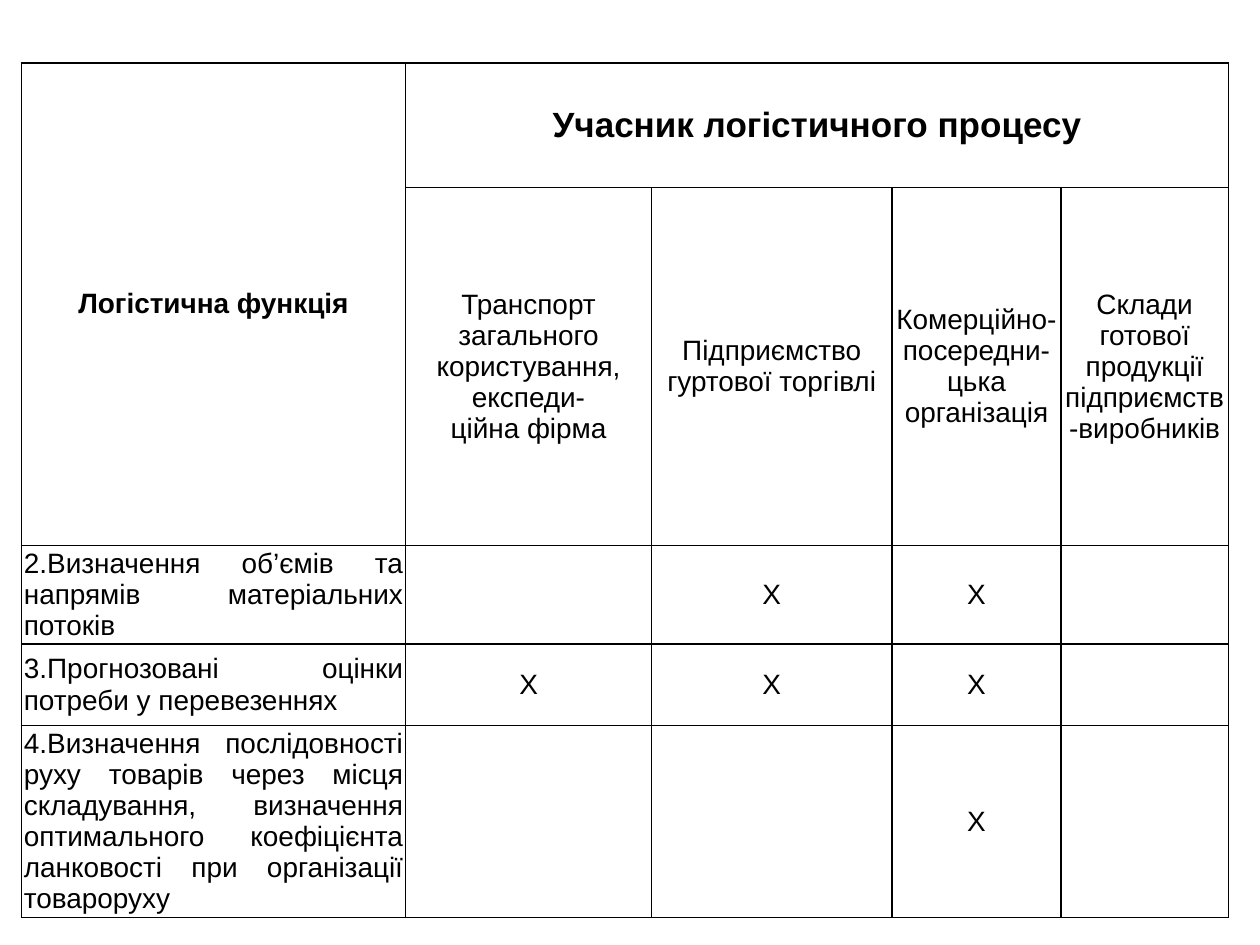
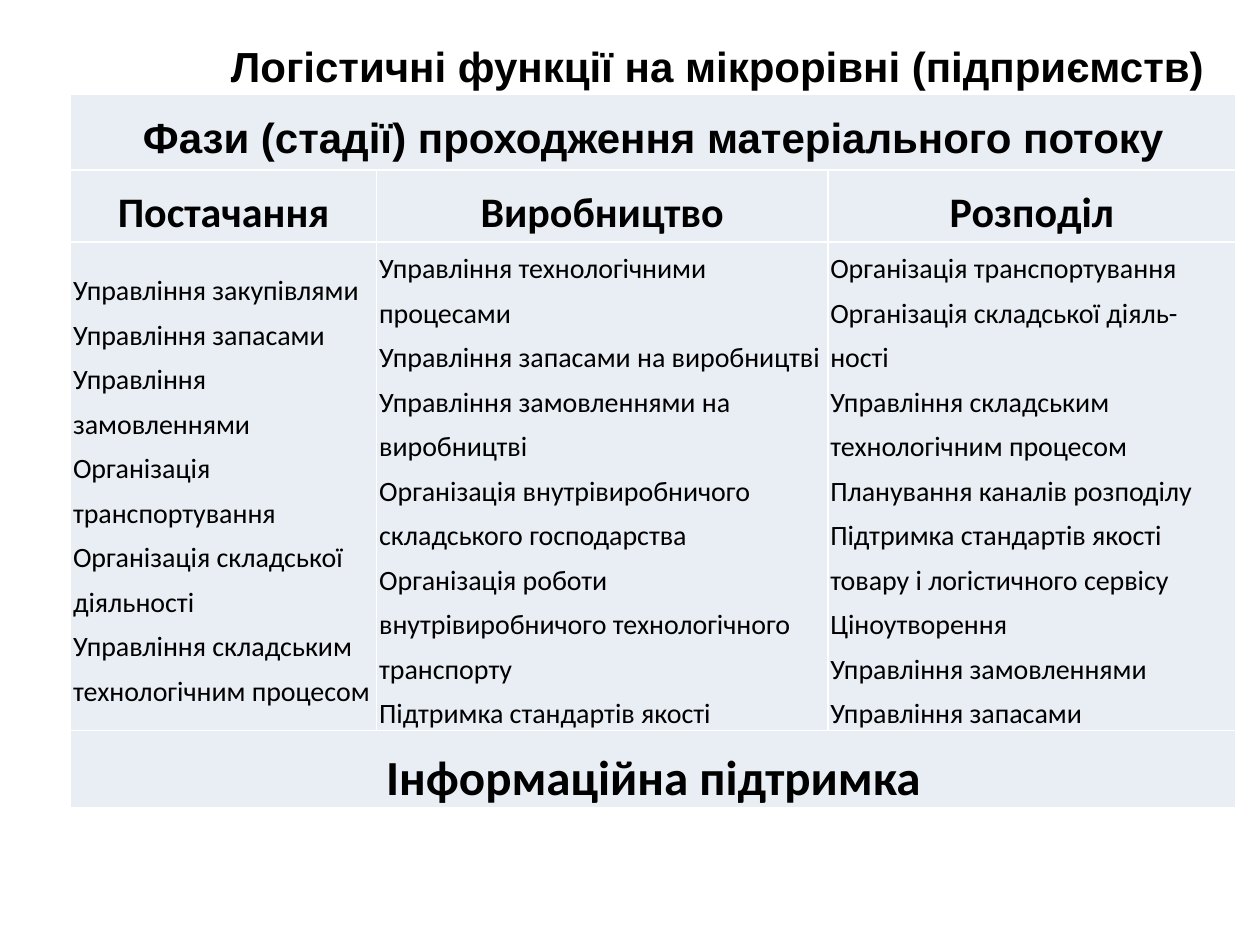
from dataclasses import dataclass

from lxml import etree
from pptx import Presentation
from pptx.dml.color import RGBColor
from pptx.enum.text import MSO_ANCHOR, MSO_AUTO_SIZE, PP_ALIGN
from pptx.oxml.ns import qn
from pptx.util import Inches, Pt

LEFT, CENTER, JUSTIFY = PP_ALIGN.LEFT, PP_ALIGN.CENTER, PP_ALIGN.JUSTIFY
MIDDLE = MSO_ANCHOR.MIDDLE
GROW = MSO_AUTO_SIZE.SHAPE_TO_FIT_TEXT
TITLE_ONLY, BLANK = 5, 6


@dataclass(frozen=True)
class Theme:
    ink: str = "000000"
    paper: str = "FFFFFF"
    band: str = "E9EDF4"
    heading_font: str = "Arial"
    list_font: str = "Calibri"
    body: int = 16
    group: int = 20
    title: int = 24
    footer: int = 28
    line: float = 1
    loose: float = 1.3


THEME = Theme()

PARTICIPANTS = [
    ["Транспорт загального", "користування, експеди-", "ційна фірма"],
    ["Підприємство гуртової торгівлі"],
    ["Комерційно-посередни-", "цька організація"],
    ["Склади готової продукції підприємств-виробників"],
]
# Each function with the columns of the participants that perform it
FUNCTIONS = [
    ("2.Визначення об’ємів та напрямів матеріальних потоків", (2, 3)),
    ("3.Прогнозовані оцінки потреби у перевезеннях", (1, 2, 3)),
    ("4.Визначення послідовності руху товарів через місця складування, визначення "
     "оптимального коефіцієнта ланковості при організації товароруху", (3,)),
]
PHASES = {
    "Постачання": [
        "Управління закупівлями",
        "Управління запасами",
        "Управління замовленнями",
        "Організація транспортування",
        "Організація складської діяльності",
        "Управління складським технологічним процесом",
    ],
    "Виробництво": [
        "Управління технологічними процесами",
        "Управління запасами на виробництві",
        "Управління замовленнями на виробництві",
        "Організація внутрівиробничого складського господарства",
        "Організація роботи внутрівиробничого технологічного транспорту",
        "Підтримка стандартів якості",
    ],
    "Розподіл": [
        "Організація транспортування",
        "Організація складської діяль-ності",
        "Управління складським технологічним процесом",
        "Планування каналів розподілу",
        "Підтримка стандартів якості товару і логістичного сервісу",
        "Ціноутворення",
        "Управління замовленнями",
        "Управління запасами",
    ],
}


def write(tf, *lines, size=THEME.body, font=THEME.heading_font, bold=False,
          align=CENTER, spacing=1.0):
    """Fill a text frame with one paragraph for each line."""
    tf.word_wrap = True
    for i, line in enumerate(lines):
        p = tf.paragraphs[0] if i == 0 else tf.add_paragraph()
        p.alignment, p.line_spacing = align, spacing
        p.space_before = p.space_after = Pt(0)
        r = p.add_run()
        r.text = line
        r.font.size, r.font.name, r.font.bold = Pt(size), font, bold
        r.font.color.rgb = RGBColor.from_string(THEME.ink)


def set_borders(cell, color):
    tcPr = cell._tc.get_or_add_tcPr()
    for i, side in enumerate(("lnL", "lnR", "lnT", "lnB")):
        ln = etree.Element(qn(f"a:{side}"), w=str(Pt(THEME.line)))
        fill = etree.SubElement(ln, qn("a:solidFill"))
        etree.SubElement(fill, qn("a:srgbClr"), val=color)
        tcPr.insert(i, ln)


def add_grid(slide, left, top, cols, rows, border, fill=None, inset=0.02):
    """Add a table with one border colour, one optional fill and tight cells."""
    frame = slide.shapes.add_table(len(rows), len(cols), Inches(left), Inches(top),
                                   Inches(sum(cols)), Inches(sum(rows)))
    table = frame.table
    table.first_row = table.horz_banding = False
    for column, width in zip(table.columns, cols):
        column.width = Inches(width)
    for row, height in zip(table.rows, rows):
        row.height = Inches(height)
    for cell in table.iter_cells():
        cell.vertical_anchor = MIDDLE
        cell.margin_left = cell.margin_right = Inches(0.02)
        cell.margin_top = cell.margin_bottom = Inches(inset)
        if fill:
            cell.fill.solid()
            cell.fill.fore_color.rgb = RGBColor.from_string(fill)
        else:
            cell.fill.background()
        set_borders(cell, border)
    return table


def merged(table, first, last):
    cell = table.cell(*first)
    cell.merge(table.cell(*last))
    return cell.text_frame


def participants_table(slide, left, top):
    table = add_grid(slide, left, top, [3.05, 1.95, 1.91, 1.34, 1.33],
                     [0.99, 2.84, 0.78, 0.65, 1.52], THEME.ink)
    write(merged(table, (0, 0), (1, 0)), "Логістична функція", bold=True)
    write(merged(table, (0, 1), (0, 4)), "Учасник логістичного процесу",
          size=THEME.group, bold=True)
    for col, lines in enumerate(PARTICIPANTS, 1):
        write(table.cell(1, col).text_frame, *lines)
    for row, (function, marks) in enumerate(FUNCTIONS, 2):
        write(table.cell(row, 0).text_frame, function, align=JUSTIFY)
        for col in marks:
            write(table.cell(row, col).text_frame, "Х")


def phases_table(slide, left, top):
    table = add_grid(slide, left, top, [2.43, 3.58, 3.24], [0.6, 0.57, 3.88, 0.61],
                     THEME.paper, fill=THEME.band, inset=0)
    head = dict(size=THEME.title, bold=True, spacing=THEME.loose)
    write(merged(table, (0, 0), (0, 2)),
          "Фази (стадії) проходження матеріального потоку", **head)
    for col, (phase, tasks) in enumerate(PHASES.items()):
        write(table.cell(1, col).text_frame, phase, font=THEME.list_font, **head)
        write(table.cell(2, col).text_frame, *tasks, font=THEME.list_font,
              align=LEFT, spacing=THEME.loose)
    write(merged(table, (3, 0), (3, 2)), "Інформаційна підтримка", size=THEME.footer,
          font=THEME.list_font, bold=True, spacing=THEME.loose)


def place_title(slide, text, left, top, width, height):
    sp = slide.shapes.title
    sp.left, sp.top, sp.width, sp.height = map(Inches, (left, top, width, height))
    tf = sp.text_frame
    tf.auto_size, tf.vertical_anchor = GROW, MIDDLE
    tf.margin_left, tf.margin_top = Inches(1.12), Inches(0.17)
    tf.margin_right, tf.margin_bottom = Inches(0.1), Inches(0.04)
    write(tf, text, size=THEME.title, bold=True)


def main():
    prs = Presentation()
    prs.slide_width, prs.slide_height = Inches(10), Inches(7.5)

    slide = prs.slides.add_slide(prs.slide_layouts[BLANK])
    participants_table(slide, 0.17, 0.5)

    slide = prs.slides.add_slide(prs.slide_layouts[TITLE_ONLY])
    place_title(slide, "Логістичні функції на мікрорівні (підприємств)",
                0.4, 0.15, 9.57, 0.61)
    phases_table(slide, 0.56, 0.75)

    prs.save("out.pptx")


if __name__ == "__main__":
    main()
